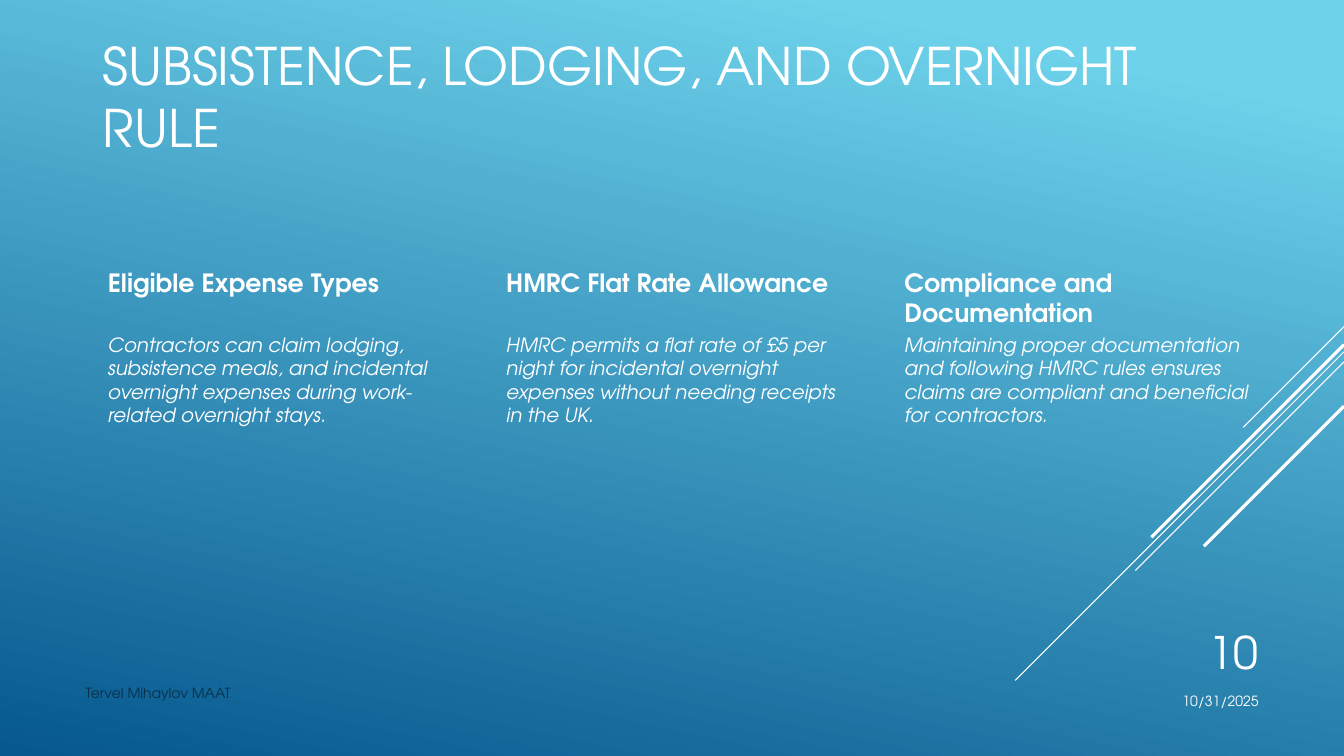
"""Build the slide on subsistence, lodging and the overnight rule."""
import pptx
import pptx.util
import pptx.dml.color
import pptx.enum.shapes
import pptx.enum.text
import pptx.oxml.ns
import lxml.etree

RGB = pptx.dml.color.RGBColor
WHITE = RGB(0xFF, 0xFF, 0xFF)
SKY = RGB(0x6E, 0xD2, 0xEB)
DEEP = RGB(0x06, 0x58, 0x8E)
NAVY = RGB(0x0A, 0x30, 0x4A)
FONT = "TeX Gyre Adventor"
ALIGN = pptx.enum.text.PP_ALIGN
ANCHOR = pptx.enum.text.MSO_ANCHOR

WIDTH, HEIGHT = 1333, 750
TITLE = "SUBSISTENCE, LODGING, AND OVERNIGHT RULE"
TOPICS = [
    ("Eligible Expense Types",
     "Contractors can claim lodging, subsistence meals, and incidental "
     "overnight expenses during work-related overnight stays."),
    ("HMRC Flat Rate Allowance",
     "HMRC permits a flat rate of £5 per night for incidental overnight "
     "expenses without needing receipts in the UK."),
    ("Compliance and Documentation",
     "Maintaining proper documentation and following HMRC rules ensures "
     "claims are compliant and beneficial for contractors."),
]
FOOTERS = [
    ("Tervel Mihaylov MAAT", (75, 667, 825, 40), 10, NAVY, ALIGN.LEFT),
    ("10/31/2025", (1083, 675, 175, 40), 10, WHITE, ALIGN.RIGHT),
    ("10", (1133, 610, 125, 73), 32, WHITE, ALIGN.RIGHT),
]
STREAKS = [(324, 100, 0.75), (349, 326, 0.75), (359, 207, 0.75),
           (342, 191, 2.25), (403, 139, 2.25)]
LEFT, STEP, COL = 92, 395, 359
HEAD_TOP, HEAD_H, BODY_H = 262, 66, 382


def px(n):
    return pptx.util.Emu(n * 9144)


def write(shape, text, size, color=WHITE, align=ALIGN.LEFT,
          anchor=ANCHOR.TOP, inset=(10, 5, 10, 5), bold=False, italic=False):
    frame = shape.text_frame
    frame.text = text
    frame.word_wrap = True
    frame.auto_size = pptx.enum.text.MSO_AUTO_SIZE.NONE
    frame.vertical_anchor = anchor
    (frame.margin_left, frame.margin_top,
     frame.margin_right, frame.margin_bottom) = map(px, inset)
    para = frame.paragraphs[0]
    para.alignment = align
    font = para.runs[0].font
    font.name, font.size = FONT, pptx.util.Pt(size)
    font.bold, font.italic = bold, italic
    font.color.rgb = color


def add_text(slide, box, text, size, **style):
    write(slide.shapes.add_textbox(*map(px, box)), text, size, **style)


def add_streak(slide, top, run, weight):
    line = slide.shapes.add_connector(
        pptx.enum.shapes.MSO_CONNECTOR.STRAIGHT,
        px(WIDTH), px(top), px(WIDTH - run), px(top + run))
    line.line.color.rgb = WHITE
    line.line.width = pptx.util.Pt(weight)
    lxml.etree.SubElement(line._element.spPr,
                          pptx.oxml.ns.qn("a:effectLst"))


def main():
    deck = pptx.Presentation()
    deck.slide_width, deck.slide_height = px(WIDTH), px(HEIGHT)
    slide = deck.slides.add_slide(deck.slide_layouts[5])

    fill = slide.background.fill
    fill.gradient()
    fill.gradient_angle = 360 - 102
    for stop, (place, color) in zip(fill.gradient_stops,
                                    [(0.1, SKY), (1, DEEP)]):
        stop.position, stop.color.rgb = place, color

    for streak in STREAKS:
        add_streak(slide, *streak)

    title = slide.shapes.title
    title.left, title.top, title.width, title.height = map(
        px, (LEFT, 40, 1150, 122))
    write(title, TITLE, 37, anchor=ANCHOR.BOTTOM)

    for i, (head, body) in enumerate(TOPICS):
        x = LEFT + i * STEP
        add_text(slide, (x, HEAD_TOP, COL, HEAD_H), head, 18,
                 inset=(15, 3, 3, 3), bold=True)
        add_text(slide, (x, HEAD_TOP + HEAD_H, COL, BODY_H), body, 14,
                 inset=(15, 2, 2, 2), italic=True)

    for text, box, size, color, align in FOOTERS:
        add_text(slide, box, text, size, color=color, align=align,
                 anchor=ANCHOR.MIDDLE)

    deck.save("out.pptx")


if __name__ == "__main__":
    main()
